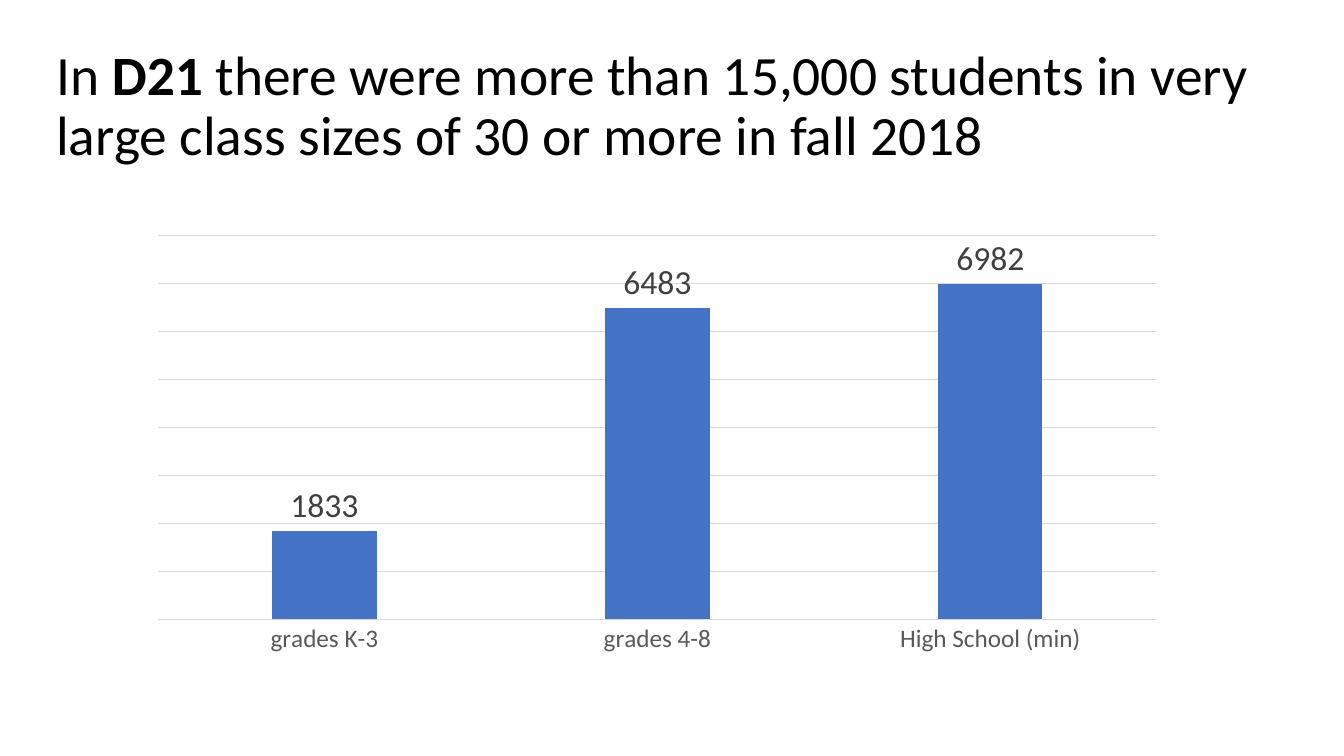
from pptx import Presentation
from pptx.chart.data import CategoryChartData
from pptx.dml.color import RGBColor
from pptx.enum import chart as ch, text
from pptx.util import Inches, Pt

FONT = "Calibri"
COLORS = {"title": "000000", "bar": "4472C4", "grid": "D9D9D9",
          "category": "595959", "value": "404040"}
STUDENTS = {"grades K-3": 1833, "grades 4-8": 6483, "High School (min)": 6982}
TITLE = [("In ", False), ("D21 ", True),
         ("there were more than 15,000 students in very large class sizes "
          "of 30 or more in fall 2018", False)]


def style_font(font, size, color):
    font.name = FONT
    font.size = Pt(size)
    font.color.rgb = RGBColor.from_string(COLORS[color])


def style_line(line):
    line.color.rgb = RGBColor.from_string(COLORS["grid"])
    line.width = Pt(0.75)


prs = Presentation()
prs.slide_width, prs.slide_height = Inches(13.33), Inches(7.5)
s = prs.slides.add_slide(prs.slide_layouts[6])

# Title
tf = s.shapes.add_textbox(Inches(0.46), Inches(0.39), Inches(12.42), Inches(1.36)).text_frame
tf.word_wrap = True
tf.vertical_anchor = text.MSO_ANCHOR.MIDDLE
p = tf.paragraphs[0]
p.line_spacing = 0.9
for words, bold in TITLE:
    r = p.add_run()
    r.text = words
    r.font.bold = bold
    style_font(r.font, 39.6, "title")

# Column chart
data = CategoryChartData()
data.categories = list(STUDENTS)
data.add_series("Series 1", list(STUDENTS.values()))
chart = s.shapes.add_chart(ch.XL_CHART_TYPE.COLUMN_CLUSTERED, Inches(1.36), Inches(2.25),
                           Inches(10.32), Inches(4.32), data).chart
chart.has_legend = False
chart.has_title = False
style_font(chart.font, 10, "title")

cats = chart.category_axis
cats.major_tick_mark = ch.XL_TICK_MARK.NONE
style_font(cats.tick_labels.font, 18, "category")
style_line(cats.format.line)

vals = chart.value_axis
vals.visible = False
vals.minimum_scale, vals.maximum_scale, vals.major_unit = 0, 8000, 1000
vals.has_major_gridlines = True
style_line(vals.major_gridlines.format.line)

plot = chart.plots[0]
plot.gap_width, plot.overlap = 219, -27
plot.vary_by_categories = False
bars = plot.series[0]
bars.format.fill.solid()
bars.format.fill.fore_color.rgb = RGBColor.from_string(COLORS["bar"])
labels = bars.data_labels
labels.show_value = True
labels.position = ch.XL_LABEL_POSITION.OUTSIDE_END
style_font(labels.font, 24, "value")

prs.save("out.pptx")
